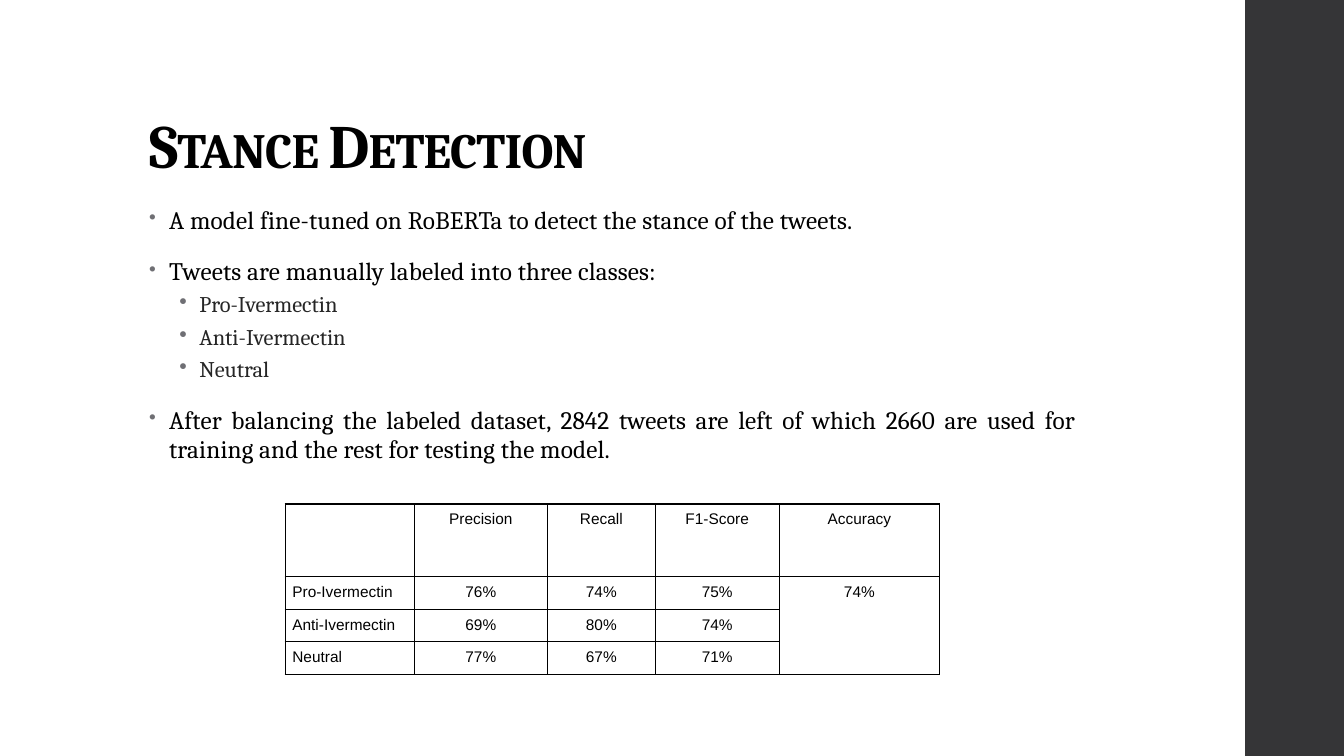
from dataclasses import dataclass
from typing import Any

from lxml import etree
from pptx import Presentation
from pptx import util as u
from pptx.dml import color
from pptx.enum import shapes, text
from pptx.oxml import ns

HUES = {"bar": "353537", "ink": "000000", "soft": "262626", "dot": "6F6F74"}


@dataclass
class Level:
    size: int
    hue: str
    track: int
    left: float
    dot: int
    form: dict[str, Any]


@dataclass
class Point:
    words: str
    depth: int = 0


JUST = text.PP_ALIGN.JUSTIFY
LEVELS = [
    Level(18, "ink", 10, 0.2, 80, {
        "level": 0, "alignment": JUST, "line_spacing": 0.95,
        "space_before": u.Pt(14), "space_after": u.Pt(2)}),
    Level(16, "soft", 0, 0.5, 100, {
        "level": 1, "alignment": JUST, "line_spacing": 0.9,
        "space_before": u.Pt(3), "space_after": u.Pt(3)}),
]
POINTS = [
    Point("A model fine-tuned on RoBERTa to detect the stance of the tweets."),
    Point("Tweets are manually labeled into three classes:"),
    Point("Pro-Ivermectin", 1),
    Point("Anti-Ivermectin", 1),
    Point("Neutral", 1),
    Point("After balancing the labeled dataset, 2842 tweets are left of which "
          "2660 are used for training and the rest for testing the model."),
]
GRID = [
    ["", "Precision", "Recall", "F1-Score", "Accuracy"],
    ["Pro-Ivermectin", "76%", "74%", "75%", "74%"],
    ["Anti-Ivermectin", "69%", "80%", "74%", ""],
    ["Neutral", "77%", "67%", "71%", ""],
]
COLS = [1.28, 1.32, 1.07, 1.23, 1.59]
ROWS = [0.72, 0.31, 0.31, 0.31]
PADS = ["margin_left", "margin_right", "margin_top", "margin_bottom"]


def apply(item: Any, form: dict[str, Any]) -> None:
    for key, val in form.items():
        setattr(item, key, val)


def tint(name: str) -> color.RGBColor:
    return color.RGBColor.from_string(HUES[name])


def node(base: Any, tag: str, **atts: str) -> Any:
    return etree.SubElement(base, ns.qn(tag), atts)


def box(*spots: float) -> list[u.Length]:
    return [u.Inches(spot) for spot in spots]


def write(para: Any, words: str, face: str, size: int, hue: str,
          bold: bool = False, **atts: str) -> None:
    run = para.add_run()
    run.text = words
    apply(run.font, {"name": face, "size": u.Pt(size), "bold": bold})
    run.font.color.rgb = tint(hue)
    for key, val in atts.items():
        run.font._element.set(key, val)


def draw_bar(slide: Any) -> None:
    bar = slide.shapes.add_shape(
        shapes.MSO_SHAPE.RECTANGLE, *box(12.35, 0, 1, 7.5))
    bar.shadow.inherit = False
    bar.fill.solid()
    bar.fill.fore_color.rgb = tint("bar")
    bar.line.fill.background()


def draw_title(slide: Any) -> None:
    frame = slide.shapes.add_textbox(*box(1.38, 0.4, 10.6, 1.45)).text_frame
    apply(frame, {"word_wrap": True, "vertical_anchor": text.MSO_ANCHOR.BOTTOM})
    para = frame.paragraphs[0]
    para.line_spacing = 0.9
    write(para, "Stance Detection", "Cambria", 44, "ink", True,
          spc="-50", cap="small")


def draw_points(slide: Any) -> None:
    frame = slide.shapes.add_textbox(*box(1.38, 2, 9.4, 5.1)).text_frame
    frame.word_wrap = True
    for num, point in enumerate(POINTS):
        para = frame.add_paragraph() if num else frame.paragraphs[0]
        level = LEVELS[point.depth]
        apply(para, level.form)
        props = para._p.get_or_add_pPr()
        props.set("marL", str(u.Inches(level.left)))
        props.set("indent", str(u.Inches(-0.2)))
        node(node(props, "a:buClr"), "a:srgbClr", val=HUES["dot"])
        node(props, "a:buSzPct", val=str(level.dot * 1000))
        node(props, "a:buChar", char="•")
        write(para, point.words, "Cambria", level.size, level.hue,
              spc=str(level.track))


def edge(cell: Any) -> None:
    props = cell._tc.get_or_add_tcPr()
    for spot, side in enumerate("LRTB"):
        line = node(props, f"a:ln{side}", w=str(u.Pt(1)))
        node(node(line, "a:solidFill"), "a:srgbClr", val=HUES["ink"])
        props.insert(spot, line)


def draw_table(slide: Any) -> None:
    frame = slide.shapes.add_table(
        len(ROWS), len(COLS), *box(2.83, 5, sum(COLS), sum(ROWS)))
    table = frame.table
    apply(table, {"first_row": False, "horz_banding": False})
    for col, width in zip(table.columns, COLS):
        col.width = u.Inches(width)
    for row, height in zip(table.rows, ROWS):
        row.height = u.Inches(height)
    for r, line in enumerate(GRID):
        for c, words in enumerate(line):
            cell = table.cell(r, c)
            apply(cell, dict.fromkeys(PADS, u.Inches(0.07)))
            cell.fill.background()
            edge(cell)
            para = cell.text_frame.paragraphs[0]
            if c:
                para.alignment = text.PP_ALIGN.CENTER
            if words:
                write(para, words, "Arial", 11, "ink")
            else:
                node(para._p, "a:endParaRPr", sz="1100")
    table.cell(1, 4).merge(table.cell(3, 4))


def main() -> None:
    deck = Presentation()
    apply(deck, {"slide_width": u.Inches(13.33), "slide_height": u.Inches(7.5)})
    slide = deck.slides.add_slide(deck.slide_layouts[6])
    for draw in (draw_bar, draw_title, draw_points, draw_table):
        draw(slide)
    deck.save("out.pptx")


if __name__ == "__main__":
    main()
